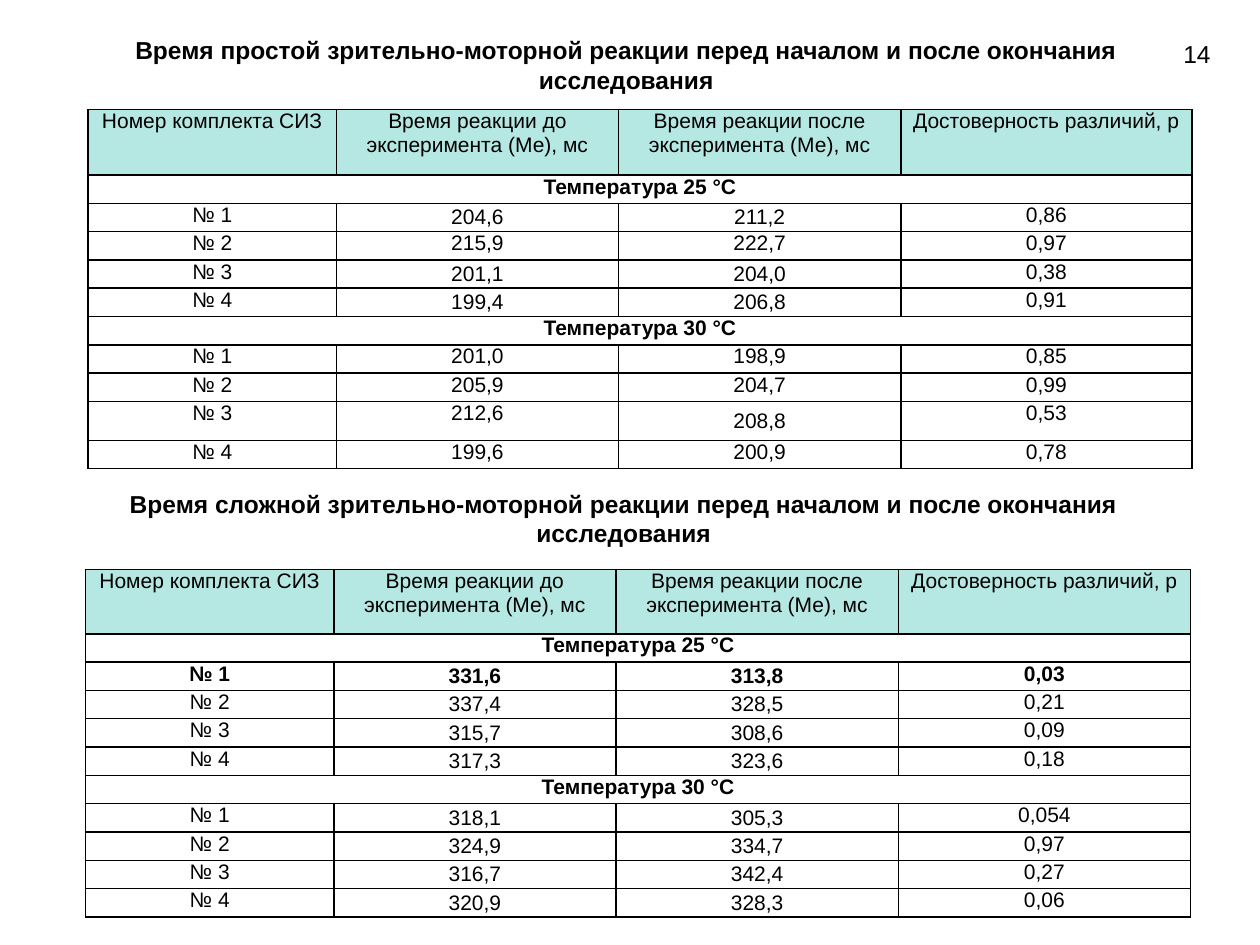
from dataclasses import dataclass
from itertools import product

from lxml.etree import SubElement
from pptx import Presentation
from pptx.dml.color import RGBColor
from pptx.enum.text import MSO_ANCHOR, MSO_AUTO_SIZE, PP_ALIGN
from pptx.oxml.ns import qn
from pptx.util import Inches, Pt


@dataclass(frozen=True)
class Theme:
    font: str = "Arial"
    text: str = "000000"
    border: str = "000000"
    header: str = "B6E8E3"
    body: str = "FFFFFF"
    title_size: int = 14
    table_size: int = 12
    border_width: int = 1


THEME = Theme()
HEADERS = ["Номер комплекта СИЗ", "Время реакции до эксперимента (Ме), мс",
           "Время реакции после эксперимента (Ме), мс", "Достоверность различий, р"]
TITLE = "Время {} зрительно-моторной реакции перед началом и после окончания исследования"
SIMPLE_REACTION = {
    "Температура 25 °С": [("204,6", "211,2", "0,86"), ("215,9", "222,7", "0,97"),
                          ("201,1", "204,0", "0,38"), ("199,4", "206,8", "0,91")],
    "Температура 30 °С": [("201,0", "198,9", "0,85"), ("205,9", "204,7", "0,99"),
                          ("212,6", "208,8", "0,53"), ("199,6", "200,9", "0,78")],
}
COMPLEX_REACTION = {
    "Температура 25 °С": [("331,6", "313,8", "0,03"), ("337,4", "328,5", "0,21"),
                          ("315,7", "308,6", "0,09"), ("317,3", "323,6", "0,18")],
    "Температура 30 °С": [("318,1", "305,3", "0,054"), ("324,9", "334,7", "0,97"),
                          ("316,7", "342,4", "0,27"), ("320,9", "328,3", "0,06")],
}


def apply_format(target, values):
    for name, value in values.items():
        setattr(target, name, value)


def write_text(frame, text, size, bold=False):
    frame.text = text
    paragraph = frame.paragraphs[0]
    paragraph.alignment = PP_ALIGN.CENTER
    font = paragraph.runs[0].font
    apply_format(font, {"name": THEME.font, "size": Pt(size), "bold": bold})
    font.color.rgb = RGBColor.from_string(THEME.text)


def place_text(shape, box, text, bold=False):
    left, top, width, height = map(Inches, box)
    apply_format(shape, {"left": left, "top": top, "width": width, "height": height})
    apply_format(shape.text_frame, {
        "word_wrap": True,
        "auto_size": MSO_AUTO_SIZE.NONE,
        "vertical_anchor": MSO_ANCHOR.TOP,
    })
    write_text(shape.text_frame, text, THEME.title_size, bold)


def add_text(slide, box, text, bold=False):
    place_text(slide.shapes.add_textbox(*map(Inches, box)), box, text, bold)


def add_borders(cell):
    properties = cell._tc.get_or_add_tcPr()
    for position, side in enumerate(("lnL", "lnR", "lnT", "lnB")):
        line = properties.makeelement(qn(f"a:{side}"), {"w": str(Pt(THEME.border_width))})
        fill = SubElement(line, qn("a:solidFill"))
        SubElement(fill, qn("a:srgbClr"), val=THEME.border)
        properties.insert(position, line)


def format_cell(cell, fill, anchor):
    apply_format(cell, {
        "margin_left": Inches(0.07), "margin_right": Inches(0.07),
        "margin_top": 0, "margin_bottom": 0, "vertical_anchor": anchor,
    })
    cell.fill.solid()
    cell.fill.fore_color.rgb = RGBColor.from_string(fill)
    add_borders(cell)


def table_rows(sections):
    rows = [HEADERS]
    for heading, values in sections.items():
        rows.append([heading])
        rows += [[f"№ {number}", *record] for number, record in enumerate(values, 1)]
    return rows


def add_reaction_table(slide, box, sections, last_column, fixed_heights, middle_cells, bold_rows=()):
    rows = table_rows(sections)
    table = slide.shapes.add_table(len(rows), len(HEADERS), *map(Inches, box)).table
    for column, width in zip(table.columns, (1.97, 2.24, 2.24, last_column)):
        column.width = Inches(width)
    even_height = (box[3] - sum(fixed_heights.values())) / (len(rows) - len(fixed_heights))
    for row_index, values in enumerate(rows):
        table.rows[row_index].height = Inches(fixed_heights.get(row_index, even_height))
        is_heading = len(values) == 1
        for column_index in range(len(HEADERS)):
            middle = (row_index, column_index) in middle_cells
            format_cell(table.cell(row_index, column_index),
                        THEME.body if row_index else THEME.header,
                        MSO_ANCHOR.MIDDLE if middle else MSO_ANCHOR.TOP)
        if is_heading:
            table.cell(row_index, 0).merge(table.cell(row_index, len(HEADERS) - 1))
        for column_index, text in enumerate(values):
            write_text(table.cell(row_index, column_index).text_frame, text,
                       THEME.table_size, is_heading or row_index in bold_rows)


def main():
    presentation = Presentation()
    apply_format(presentation, {"slide_width": Inches(10), "slide_height": Inches(7.5)})
    slide = presentation.slides.add_slide(presentation.slide_layouts[5])
    add_text(slide, (9.26, 0.26, 0.48, 0.31), "14")
    place_text(slide.shapes.title, (0.75, 0.23, 8.44, 0.57), TITLE.format("простой"), True)
    add_text(slide, (0.68, 3.83, 8.54, 0.57), TITLE.format("сложной"), True)
    add_reaction_table(slide, (0.7, 0.87, 8.76, 2.85), SIMPLE_REACTION, 2.31,
                       {0: 0.52, 9: 0.31}, {*product((2, 4, 5), (1, 2)), (9, 2)})
    add_reaction_table(slide, (0.68, 4.52, 8.77, 2.76), COMPLEX_REACTION, 2.32,
                       {0: 0.51}, set(product(range(2, 11), (1, 2))), bold_rows=(2,))
    presentation.save("out.pptx")


if __name__ == "__main__":
    main()
